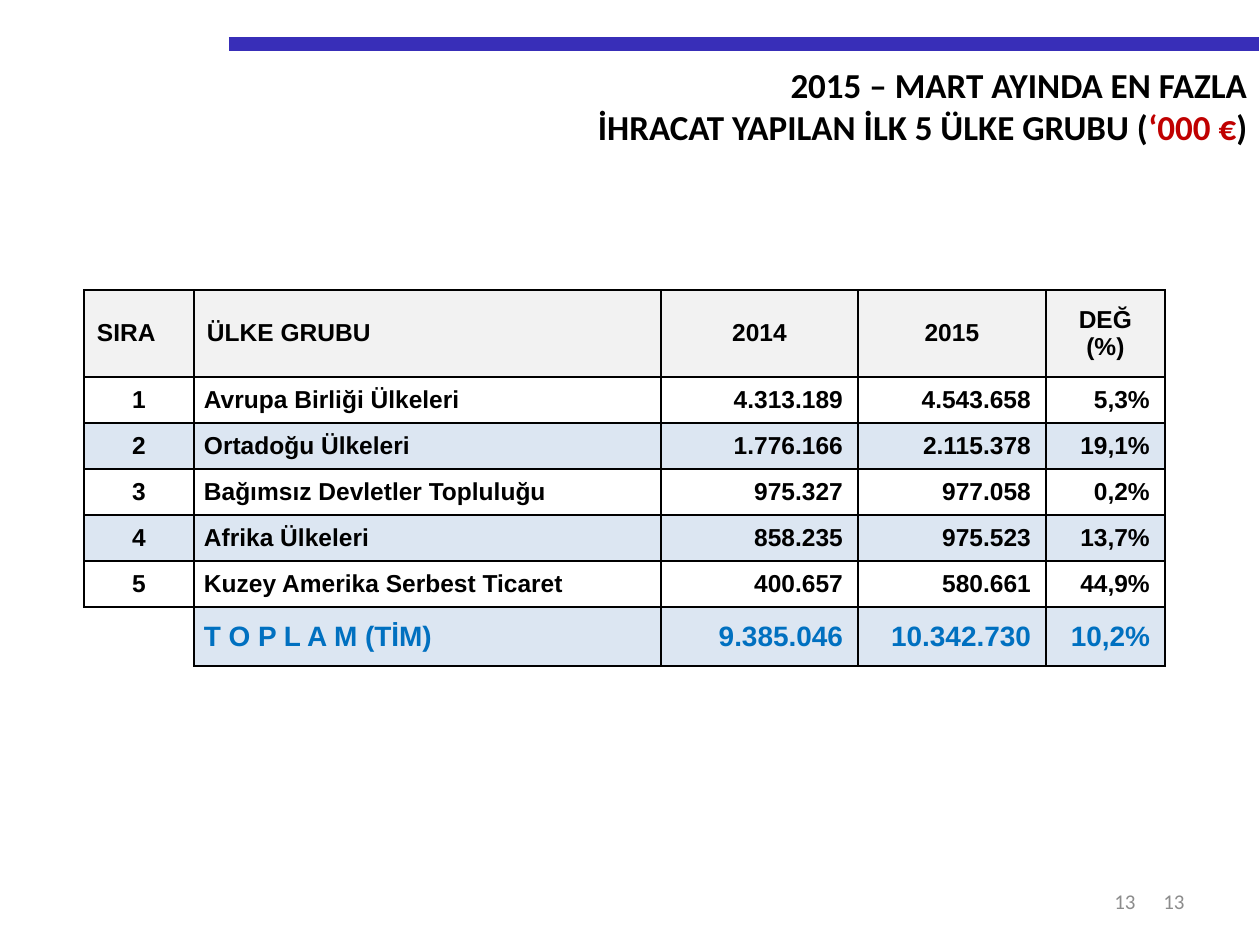
from dataclasses import dataclass
from typing import NamedTuple

from lxml.etree import SubElement
from pptx import Presentation
from pptx.dml.color import RGBColor
from pptx.enum.shapes import MSO_CONNECTOR as Connector
from pptx.enum.text import MSO_ANCHOR as Anchor, MSO_AUTO_SIZE as AutoSize, PP_ALIGN as Align
from pptx.oxml.ns import qn
from pptx.util import Emu, Pt

PX_PER_INCH = 126


@dataclass(frozen=True)
class Theme:
    black: str = "000000"
    red: str = "C00000"
    blue: str = "0070C0"
    bar: str = "382EB8"
    grey: str = "8C8C8C"
    header_fill: str = "F2F2F2"
    band_fill: str = "DCE6F2"
    heading_font: str = "Calibri"
    table_font: str = "Arial"
    title_size: int = 20
    cell_size: int = 14
    total_size: int = 16
    number_size: int = 12
    bar_width: float = 8.5
    border_width: int = 1


THEME = Theme()


class Area(NamedTuple):
    left: int
    top: int
    width: int
    height: int


class Span(NamedTuple):
    text: str
    size: int
    color: str = THEME.black
    font: str = THEME.table_font
    bold: bool = True


class Insets(NamedTuple):
    left: int
    top: int
    right: int
    bottom: int


class CellStyle(NamedTuple):
    align: Align
    insets: Insets
    fill: str | None = None
    sides: str = "LRTB"


ROOMY = Insets(13, 6, 13, 6)
NAME = Insets(10, 1, 1, 0)
FIGURE = Insets(1, 1, 15, 0)

TABLE_AREA = Area(84, 290, 1081, 376)
COLUMN_WIDTHS = (110, 467, 197, 188, 119)
HEADER_HEIGHT, ROW_HEIGHT, TOTAL_HEIGHT = 87, 46, 59

HEADER = ("SIRA", "ÜLKE GRUBU", "2014", "2015", "DEĞ\n(%)")
COUNTRY_GROUPS = (
    ("1", "Avrupa Birliği Ülkeleri", "4.313.189", "4.543.658", "5,3%"),
    ("2", "Ortadoğu Ülkeleri", "1.776.166", "2.115.378", "19,1%"),
    ("3", "Bağımsız Devletler Topluluğu", "975.327", "977.058", "0,2%"),
    ("4", "Afrika Ülkeleri", "858.235", "975.523", "13,7%"),
    ("5", "Kuzey Amerika Serbest Ticaret", "400.657", "580.661", "44,9%"),
)
TOTAL = ("", "T O P L A M (TİM)", "9.385.046", "10.342.730", "10,2%")
PAGE_NUMBER = "13"
NUMBER_AREAS = (Area(903, 876, 294, 50), Area(883, 876, 265, 50))


def px(length: int) -> Emu:
    return Emu(round(length * 914400 / PX_PER_INCH))


def rgb(color: str) -> RGBColor:
    return RGBColor.from_string(color)


def write(frame, paragraphs: list[list[Span]], align: Align) -> None:
    for index, spans in enumerate(paragraphs):
        para = frame.add_paragraph() if index else frame.paragraphs[0]
        para.alignment = align
        for span in spans:
            run = para.add_run()
            run.text = span.text
            run.font.name = span.font
            run.font.size = Pt(span.size)
            run.font.bold = span.bold
            run.font.color.rgb = rgb(span.color)


def place(shape, area: Area) -> None:
    shape.left, shape.top, shape.width, shape.height = map(px, area)


def add_title(page) -> None:
    def heading(text: str, color: str = THEME.black) -> Span:
        return Span(text, THEME.title_size, color, THEME.heading_font)

    title = page.shapes.title
    place(title, Area(134, 57, 1126, 97))
    frame = title.text_frame
    frame.word_wrap = True
    frame.auto_size = AutoSize.NONE
    frame.vertical_anchor = Anchor.TOP
    write(frame, [
        [heading("2015 – MART AYINDA EN FAZLA")],
        [heading("İHRACAT YAPILAN İLK 5 ÜLKE GRUBU ("),
         heading("‘000 €", THEME.red), heading(")")],
    ], Align.RIGHT)


def add_bar(page) -> None:
    bar = page.shapes.add_connector(Connector.STRAIGHT, px(229), px(44), px(1259), px(44))
    bar.line.color.rgb = rgb(THEME.bar)
    bar.line.width = Pt(THEME.bar_width)
    SubElement(bar._element.spPr, qn("a:effectLst"))


def add_page_number(page, area: Area) -> None:
    box = page.shapes.add_textbox(*map(px, area))
    box.text_frame.word_wrap = True
    box.text_frame.vertical_anchor = Anchor.MIDDLE
    span = Span(PAGE_NUMBER, THEME.number_size, THEME.grey, THEME.heading_font, False)
    write(box.text_frame, [[span]], Align.RIGHT)


def set_borders(cell, sides: str) -> None:
    """Rule the named sides (L, R, T, B) and clear the others."""
    properties = cell._tc.get_or_add_tcPr()
    for side in "LRTB":
        line = SubElement(properties, qn(f"a:ln{side}"), w=str(Pt(THEME.border_width)))
        if side in sides:
            fill = SubElement(line, qn("a:solidFill"))
            SubElement(fill, qn("a:srgbClr"), val=THEME.black)
        else:
            SubElement(line, qn("a:noFill"))


def fill_cell(cell, text: str, size: int, color: str, style: CellStyle) -> None:
    set_borders(cell, style.sides)
    if style.fill:
        cell.fill.solid()
        cell.fill.fore_color.rgb = rgb(style.fill)
    else:
        cell.fill.background()
    cell.vertical_anchor = Anchor.MIDDLE
    (cell.margin_left, cell.margin_top,
     cell.margin_right, cell.margin_bottom) = map(px, style.insets)
    if text:
        write(cell.text_frame, [[Span(line, size, color)] for line in text.split("\n")],
              style.align)


def body_styles(fill: str | None) -> list[CellStyle]:
    return [CellStyle(Align.CENTER, ROOMY, fill), CellStyle(Align.LEFT, NAME, fill),
            *[CellStyle(Align.RIGHT, FIGURE, fill)] * 3]


def add_export_table(page) -> None:
    rows = (HEADER, *COUNTRY_GROUPS, TOTAL)
    table = page.shapes.add_table(len(rows), len(HEADER), *map(px, TABLE_AREA)).table
    table.first_row = table.horz_banding = False
    for column, width in zip(table.columns, COLUMN_WIDTHS):
        column.width = px(width)
    heights = (HEADER_HEIGHT, *[ROW_HEIGHT] * len(COUNTRY_GROUPS), TOTAL_HEIGHT)
    for row, height in zip(table.rows, heights):
        row.height = px(height)

    header_styles = [CellStyle(align, ROOMY, THEME.header_fill)
                     for align in [Align.LEFT] * 2 + [Align.CENTER] * 3]
    group_styles = [body_styles(None if index % 2 == 0 else THEME.band_fill)
                    for index in range(len(COUNTRY_GROUPS))]
    total_styles = [CellStyle(Align.CENTER, ROOMY, sides="RT"),
                    *body_styles(THEME.band_fill)[1:]]
    styles = (header_styles, *group_styles, total_styles)
    for r, (texts, row_styles) in enumerate(zip(rows, styles)):
        is_total = texts is TOTAL
        size = THEME.total_size if is_total else THEME.cell_size
        color = THEME.blue if is_total else THEME.black
        for c, (text, style) in enumerate(zip(texts, row_styles)):
            fill_cell(table.cell(r, c), text, size, color, style)


def main() -> None:
    deck = Presentation()
    deck.slide_width, deck.slide_height = px(1260), px(945)
    page = deck.slides.add_slide(deck.slide_layouts.get_by_name("Title Only"))
    add_bar(page)
    add_title(page)
    add_export_table(page)
    for area in NUMBER_AREAS:
        add_page_number(page, area)
    deck.save("out.pptx")


if __name__ == "__main__":
    main()
